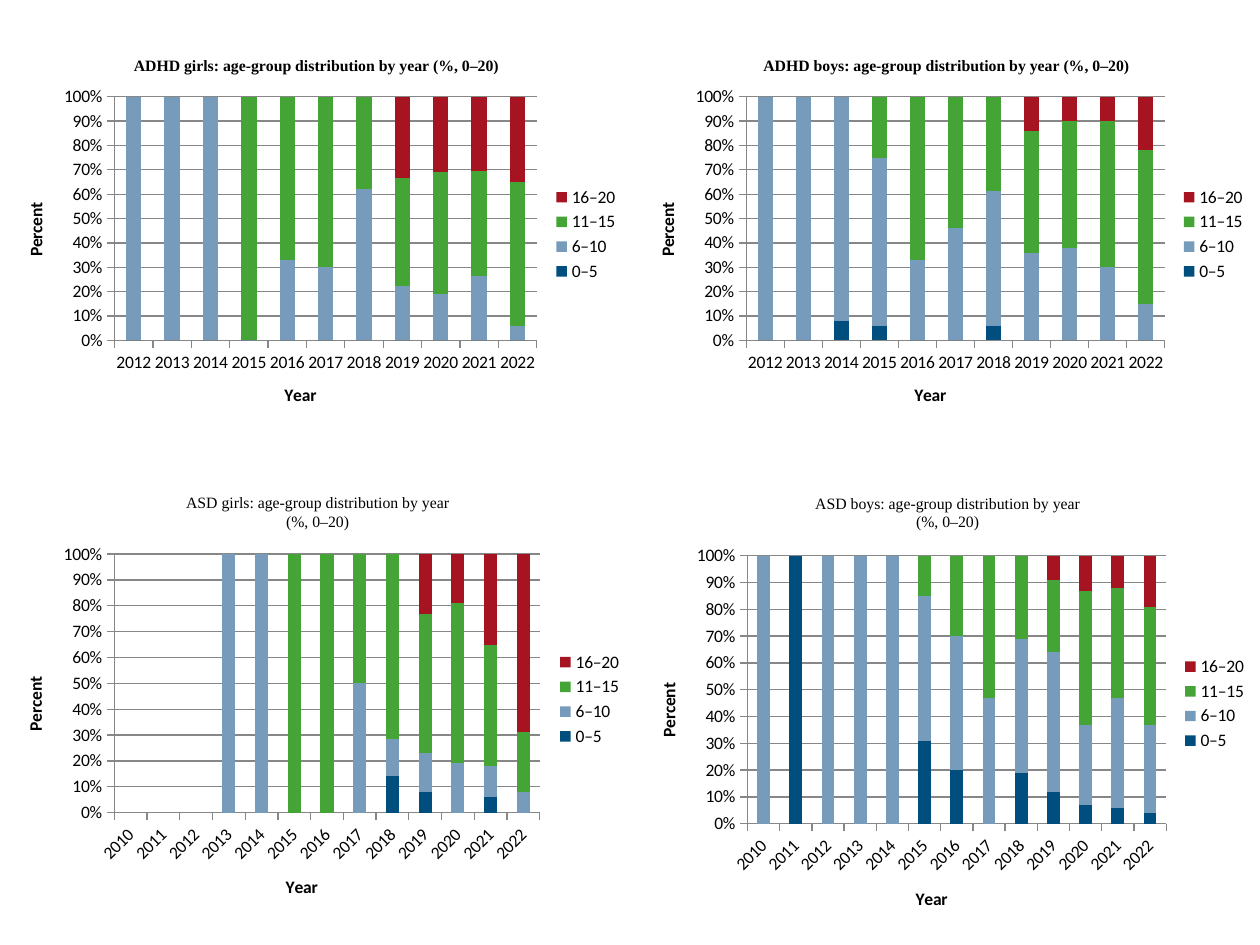
from lxml import etree
from pptx import Presentation
from pptx.chart.data import CategoryChartData
from pptx.dml.color import RGBColor
from pptx.enum.chart import XL_CHART_TYPE, XL_LEGEND_POSITION, XL_TICK_MARK
from pptx.oxml.ns import qn
from pptx.util import Inches, Pt

STACKED = XL_CHART_TYPE.COLUMN_STACKED_100
RIGHT = XL_LEGEND_POSITION.RIGHT
OUTSIDE = XL_TICK_MARK.OUTSIDE

BLACK = RGBColor(0x00, 0x00, 0x00)
GRID = RGBColor(0x87, 0x87, 0x87)
AGE_GROUPS = {
    "0–5": RGBColor(0x00, 0x4E, 0x7D),
    "6–10": RGBColor(0x77, 0x9B, 0xBB),
    "11–15": RGBColor(0x44, 0xA4, 0x36),
    "16–20": RGBColor(0xA6, 0x14, 0x22),
}
LAST_YEAR = 2022
NO_DATA = [None] * 3


def set_text(tf, text, size=10, bold=True, font="Calibri"):
    tf.text = text
    for p in tf.paragraphs:
        for r in p.runs:
            r.font.size = Pt(size)
            r.font.bold = bold
            r.font.name = font
            r.font.color.rgb = BLACK


def place_plot(chart, x, y, w, h):
    """Fix the inner plot area, in fractions of the chart frame."""
    plot_area = chart.element.find(".//" + qn("c:plotArea"))
    for old in plot_area.findall(qn("c:layout")):
        plot_area.remove(old)
    layout = etree.Element(qn("c:layout"))
    manual = etree.SubElement(layout, qn("c:manualLayout"))
    for tag, value in (("layoutTarget", "inner"), ("xMode", "edge"), ("yMode", "edge"),
                       ("x", x), ("y", y), ("w", w), ("h", h)):
        etree.SubElement(manual, qn("c:" + tag)).set("val", str(value))
    plot_area.insert(0, layout)


# Each chart: title, bold title, frame, plot top and height, first year,
# slanted years, one row of percentages per age group
CHARTS = [
    ("ASD boys: age-group distribution by year\n(%, 0–20)", False,
     (5.04, 3.75, 4.96, 3.67), (0.18, 0.58), 2010, True, [
         [0, 100, 0, 0, 0, 31, 20, 0, 19, 12, 7, 6, 4],
         [100, 0, 100, 100, 100, 54, 50, 47, 50, 52, 30, 41, 33],
         [0, 0, 0, 0, 0, 15, 30, 53, 31, 27, 50, 41, 44],
         [0, 0, 0, 0, 0, 0, 0, 0, 0, 9, 13, 12, 19]]),
    ("ASD girls: age-group distribution by year\n(%, 0–20)", False,
     (0, 3.75, 5.04, 3.6), (0.18, 0.57), 2010, True, [
         NO_DATA + [0, 0, 0, 0, 0, 14, 8, 0, 6, 0],
         NO_DATA + [100, 100, 0, 0, 50, 14, 15, 19, 12, 8],
         NO_DATA + [0, 0, 100, 100, 50, 71, 54, 62, 47, 23],
         NO_DATA + [0, 0, 0, 0, 0, 0, 23, 19, 35, 69]]),
    ("ADHD girls: age-group distribution by year (%, 0–20)", True,
     (0.01, 0.3, 5, 3.12), (0.15, 0.62), 2012, False, [
         [0, 0, 0, 0, 0, 0, 0, 0, 0, 0, 0],
         [100, 100, 100, 0, 33, 30, 62, 22, 19, 26, 6],
         [0, 0, 0, 100, 67, 70, 38, 44, 50, 43, 59],
         [0, 0, 0, 0, 0, 0, 0, 33, 31, 30, 35]]),
    ("ADHD boys: age-group distribution by year (%, 0–20)", True,
     (5.03, 0.3, 4.96, 3.12), (0.15, 0.62), 2012, False, [
         [0, 0, 8, 6, 0, 0, 6, 0, 0, 0, 0],
         [100, 100, 92, 69, 33, 46, 56, 36, 38, 30, 15],
         [0, 0, 0, 25, 67, 54, 39, 50, 52, 60, 63],
         [0, 0, 0, 0, 0, 0, 0, 14, 10, 10, 22]]),
]

prs = Presentation()
prs.slide_width = Inches(10)
prs.slide_height = Inches(7.5)
s = prs.slides.add_slide(prs.slide_layouts[6])

for title, bold, frame, (plot_top, plot_height), first_year, slanted, rows in CHARTS:
    # Data
    data = CategoryChartData()
    data.categories = [str(year) for year in range(first_year, LAST_YEAR + 1)]
    for name, values in zip(AGE_GROUPS, rows):
        data.add_series(name, values)
    chart = s.shapes.add_chart(STACKED, *[Inches(v) for v in frame], data).chart
    chart.font.size = Pt(10)
    chart.font.name = "Calibri"
    chart.font.color.rgb = BLACK

    # Title and legend
    chart.has_title = True
    set_text(chart.chart_title.text_frame, title, size=9, bold=bold, font="Times New Roman")
    chart.chart_title.include_in_layout = False
    chart.has_legend = True
    chart.legend.position = RIGHT
    chart.legend.include_in_layout = False

    # Columns
    plot = chart.plots[0]
    plot.gap_width = 150
    plot.overlap = 100
    plot.vary_by_categories = False
    for series, color in zip(plot.series, AGE_GROUPS.values()):
        series.format.fill.solid()
        series.format.fill.fore_color.rgb = color

    # Axes
    for axis, label in ((chart.category_axis, "Year"), (chart.value_axis, "Percent")):
        set_text(axis.axis_title.text_frame, label)
        axis.major_tick_mark = OUTSIDE
        axis.format.line.color.rgb = GRID
        axis.tick_labels.font.size = Pt(10)
    chart.value_axis.has_major_gridlines = True
    chart.value_axis.major_gridlines.format.line.color.rgb = GRID
    chart.value_axis.tick_labels.number_format = "0%"
    chart.value_axis.tick_labels.number_format_is_linked = False
    if slanted:
        body = chart.element.find(".//" + "/".join(map(qn, ("c:catAx", "c:txPr", "a:bodyPr"))))
        body.set("rot", "-2700000")
    place_plot(chart, 0.18, plot_top, 0.67, plot_height)

prs.save("out.pptx")
